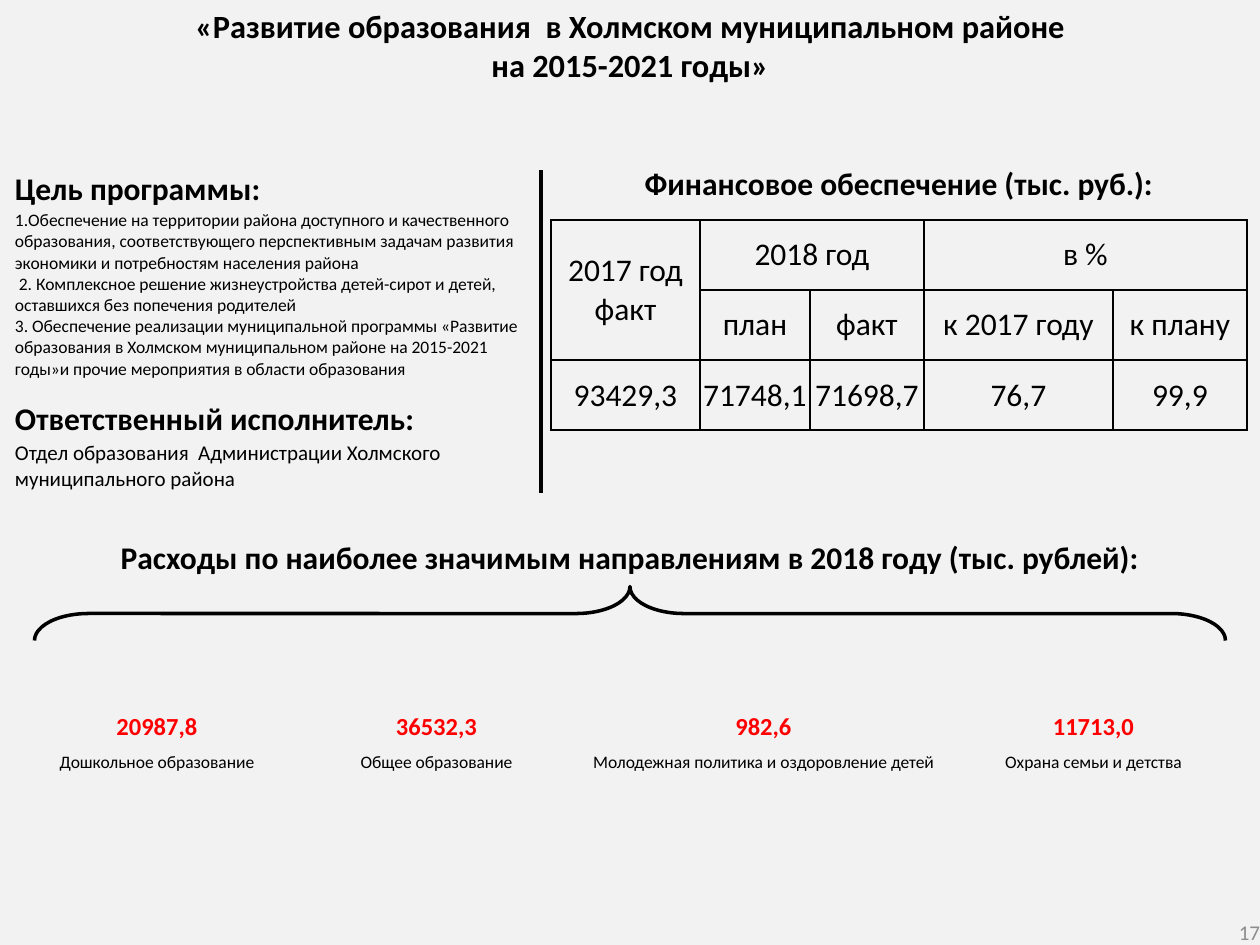
from lxml import etree
from pptx import Presentation
from pptx import util as u
from pptx.dml.color import RGBColor
from pptx.enum import shapes, text
from pptx.oxml import parse_xml
from pptx.oxml.ns import nsdecls, qn

C = {"bg": "F2F2F2", "ink": "000000", "red": "FF0000", "gray": "8C8C8C"}
A, V = text.PP_ALIGN, text.MSO_ANCHOR

TITLE = ["«Развитие образования  в Холмском муниципальном районе", "на 2015-2021 годы»"]
SPENDING_HEAD = "Расходы по наиболее значимым направлениям в 2018 году (тыс. рублей):"
FINANCE = [
    ["Финансовое обеспечение (тыс. руб.):", "", "", "", ""],
    ["2017 год факт", "2018 год", "", "в %", ""],
    ["", "план", "факт", "к 2017 году", "к плану"],
    ["93429,3", "71748,1", "71698,7", "76,7", "99,9"],
]
FINANCE_SPANS = [(0, 0, 0, 4), (1, 0, 2, 0), (1, 1, 1, 2), (1, 3, 1, 4)]
SPENDING = [
    ("20987,8", "Дошкольное образование"),
    ("36532,3", "Общее образование"),
    ("982,6", "Молодежная политика и оздоровление детей"),
    ("11713,0", "Охрана семьи и детства"),
]
GOALS = [
    "1.Обеспечение на территории района доступного и качественного образования, "
    "соответствующего перспективным задачам развития экономики и потребностям населения района",
    " 2. Комплексное решение жизнеустройства детей-сирот и детей, оставшихся без попечения родителей",
    "3. Обеспечение реализации муниципальной программы «Развитие образования в Холмском "
    "муниципальном районе на 2015-2021 годы»и прочие мероприятия в области образования",
]
PROGRAM = [
    (["Цель программы:"], 18, True),
    (GOALS, 10, False),
    (["Ответственный исполнитель:"], 18, True),
    (["Отдел образования  Администрации Холмского муниципального района"], 12, False),
]
PAGE = "17"


def px(n):
    return u.Emu(round(n * 914400 / 126))


def write(tf, lines, size, bold=False, color="ink", align=A.CENTER):
    for i, line in enumerate(lines):
        p = tf.paragraphs[0] if i == 0 else tf.add_paragraph()
        p.alignment = align
        r = p.add_run()
        r.text = line
        for key, value in {"size": u.Pt(size), "bold": bold, "name": "Calibri"}.items():
            setattr(r.font, key, value)
        r.font.color.rgb = RGBColor.from_string(C[color])


def set_margins(obj, margins):
    for side, n in zip(("left", "top", "right", "bottom"), margins):
        setattr(obj, "margin_" + side, px(n))


def add_label(s, box, line, size, margins, **fmt):
    tf = s.shapes.add_textbox(*map(px, box)).text_frame
    tf.word_wrap = True
    tf.vertical_anchor = V.MIDDLE
    set_margins(tf, margins)
    write(tf, [line], size, **fmt)


def set_borders(cell, sides, width):
    tcPr = cell._tc.get_or_add_tcPr()
    for i, side in enumerate("LRTB"):
        ln = etree.Element(qn("a:ln" + side), w=str(u.Pt(width)))
        if side in sides:
            fill = etree.SubElement(ln, qn("a:solidFill"))
            etree.SubElement(fill, qn("a:srgbClr"), val=C["ink"])
        else:
            etree.SubElement(ln, qn("a:noFill"))
        tcPr.insert(i, ln)


def add_grid(s, left, top, cols, rows):
    box = map(px, (left, top, sum(cols), sum(rows)))
    t = s.shapes.add_table(len(rows), len(cols), *box).table
    t.first_row = t.horz_banding = False
    for col, w in zip(t.columns, cols):
        col.width = px(w)
    for row, h in zip(t.rows, rows):
        row.height = px(h)
    return t


def fill_cell(cell, lines, size, margins, sides="", width=1, anchor=V.MIDDLE, **fmt):
    cell.fill.background()
    cell.vertical_anchor = anchor
    set_margins(cell, margins)
    set_borders(cell, sides, width)
    write(cell.text_frame, lines, size, **fmt)


def add_title(s):
    sp = s.shapes.title
    for key, n in {"left": 0, "top": 0, "width": 1260, "height": 90}.items():
        setattr(sp, key, px(n))
    tf = sp.text_frame
    for key, value in {"vertical_anchor": V.TOP, "auto_size": text.MSO_AUTO_SIZE.NONE,
                       "word_wrap": True}.items():
        setattr(tf, key, value)
    write(tf, TITLE, 18.5, bold=True)
    for p in tf.paragraphs:
        shadow = parse_xml(
            f'<a:effectLst {nsdecls("a")}><a:outerShdw blurRad="38100" dist="38100" dir="2700000">'
            '<a:srgbClr val="000000"><a:alpha val="43000"/></a:srgbClr></a:outerShdw></a:effectLst>')
        p.runs[0].font._element.find(qn("a:solidFill")).addnext(shadow)


def add_finance(s):
    t = add_grid(s, 551, 150, [149, 110, 114, 189, 134], [70] * 4)
    for i, row in enumerate(FINANCE):
        for j, line in enumerate(row):
            fill_cell(t.cell(i, j), [line] if line else [], 18,
                      (1, 1, 1, 0) if i == 3 else (5,) * 4,
                      "LRTB" if i else "B", bold=i == 0)
    for r1, c1, r2, c2 in FINANCE_SPANS:
        t.cell(r1, c1).merge(t.cell(r2, c2))


def add_spending(s):
    t = add_grid(s, 21, 649, [272, 287, 367, 293], [98, 198])
    for j, (amount, name) in enumerate(SPENDING):
        fill_cell(t.cell(0, j), [amount], 14, (5,) * 4, anchor=V.BOTTOM, bold=True, color="red")
        fill_cell(t.cell(1, j), [name], 10, (5,) * 4, anchor=V.TOP)


def add_program(s):
    t = add_grid(s, 15, 170, [526], [40, 191, 40, 52])
    for i, (lines, size, bold) in enumerate(PROGRAM):
        fill_cell(t.cell(i, 0), lines, size, (0,) * 4, "R", 2.25, V.TOP, bold=bold, align=A.LEFT)


def add_brace(s):
    sp = s.shapes.add_shape(shapes.MSO_SHAPE.RIGHT_BRACE, *map(px, (603, 18, 54, 1191)))
    sp.rotation = 270
    sp.adjustments[0] = 1
    sp.adjustments[1] = 0.5
    sp.shadow.inherit = False
    sp.fill.background()
    sp.line.color.rgb = RGBColor.from_string(C["ink"])
    sp.line.width = u.Pt(2)


def main():
    prs = Presentation()
    prs.slide_width, prs.slide_height = px(1260), px(945)
    s = prs.slides.add_slide(prs.slide_layouts[5])
    s.background.fill.solid()
    s.background.fill.fore_color.rgb = RGBColor.from_string(C["bg"])
    add_title(s)
    add_label(s, (0, 527, 1260, 59), SPENDING_HEAD, 18, (13, 6, 13, 6), bold=True)
    add_finance(s)
    add_brace(s)
    add_spending(s)
    add_program(s)
    add_label(s, (966, 919, 294, 26), PAGE, 12, (0,) * 4, color="gray", align=A.RIGHT)
    prs.save("out.pptx")


if __name__ == "__main__":
    main()
